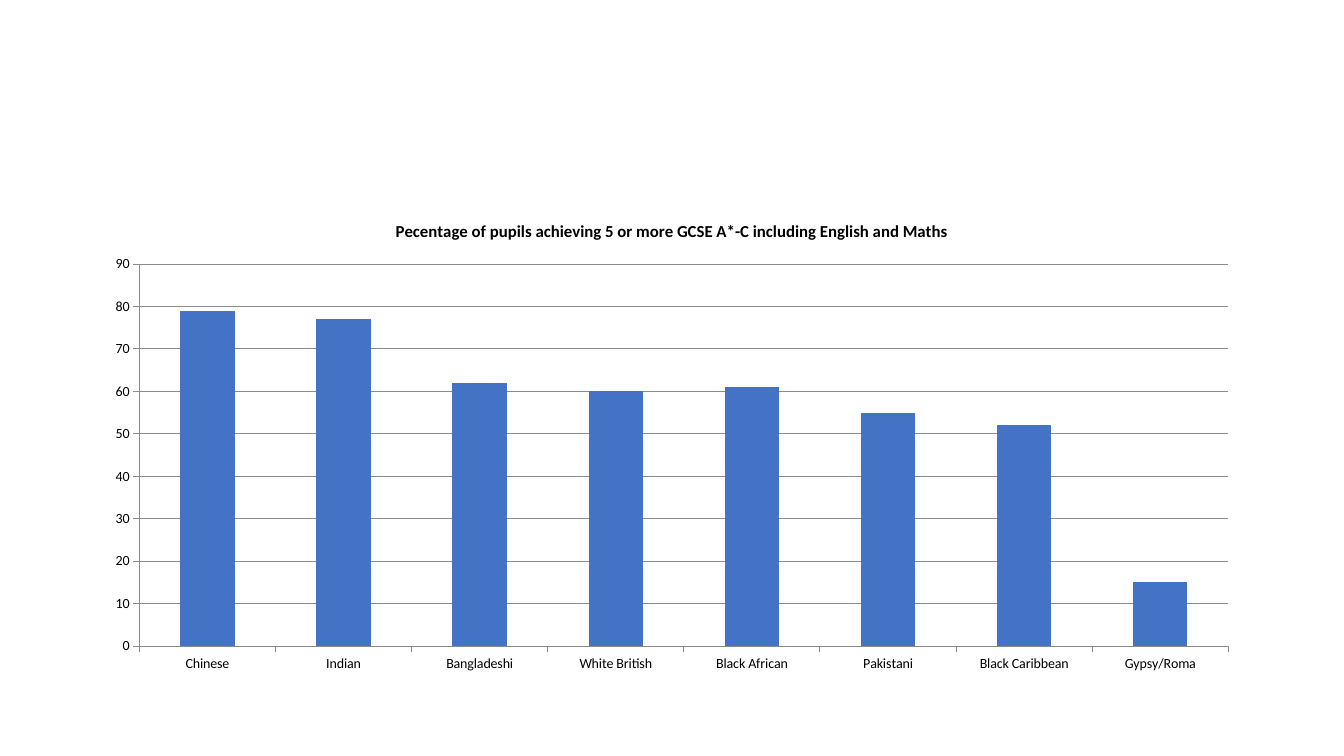
from pptx import Presentation
from pptx.chart.data import CategoryChartData
from pptx.dml.color import RGBColor
from pptx.enum.chart import XL_CHART_TYPE as ChartType, XL_TICK_MARK as TickMark
from pptx.util import Pt


def color(hex_string):
    return RGBColor.from_string(hex_string)


def style_font(font, size, bold):
    font.name = "Calibri"
    font.size = Pt(size)
    font.bold = bold
    font.color.rgb = color("000000")


presentation = Presentation()
presentation.slide_width = Pt(960)
presentation.slide_height = Pt(540)
slide = presentation.slides.add_slide(presentation.slide_layouts[6])

results = {
    "Chinese": 79,
    "Indian": 77,
    "Bangladeshi": 62,
    "White British": 60,
    "Black African": 61,
    "Pakistani": 55,
    "Black Caribbean": 52,
    "Gypsy/Roma": 15,
}
chart_data = CategoryChartData()
chart_data.categories = results.keys()
chart_data.add_series("Series 1", results.values())

chart = slide.shapes.add_chart(
    ChartType.COLUMN_CLUSTERED, Pt(66), Pt(144), Pt(828), Pt(342.72), chart_data
).chart
chart.has_legend = False
style_font(chart.font, 10, False)

chart.has_title = True
chart.chart_title.include_in_layout = False
title_frame = chart.chart_title.text_frame
title_frame.text = "Pecentage of pupils achieving 5 or more GCSE A*-C including English and Maths"
style_font(title_frame.paragraphs[0].font, 12, True)

plot = chart.plots[0]
plot.gap_width = 150
plot.vary_by_categories = False
bar_fill = plot.series[0].format.fill
bar_fill.solid()
bar_fill.fore_color.rgb = color("4472C4")

value_axis = chart.value_axis
value_axis.minimum_scale = 0
value_axis.maximum_scale = 90
value_axis.major_unit = 10
value_axis.has_major_gridlines = True
for axis in (chart.category_axis, value_axis):
    axis.major_tick_mark = TickMark.OUTSIDE
    axis.minor_tick_mark = TickMark.NONE
for lines in (chart.category_axis, value_axis, value_axis.major_gridlines):
    lines.format.line.color.rgb = color("8B8B8B")
    lines.format.line.width = Pt(0.75)

presentation.save("out.pptx")
